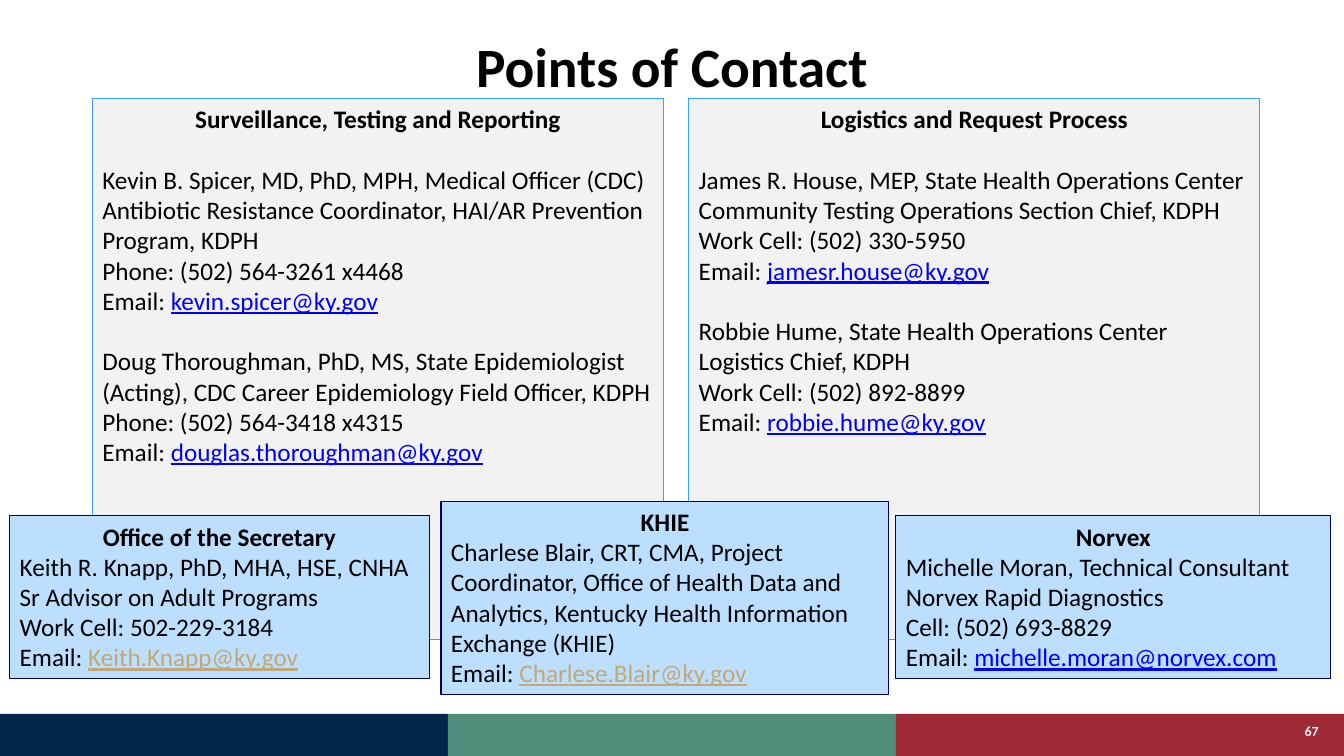
"""Build the Points of Contact slide."""
from pptx import Presentation
from pptx import util as u
from pptx.dml.color import RGBColor
from pptx.enum import shapes, text

Pt = u.Pt
COLORS = {
    "black": "000000", "grey": "F2F2F2", "sky": "3AA0FF", "pale": "BDDFFF",
    "navy": "000066", "link": "0000FF", "gold": "C1A875",
    "bar_blue": "002649", "bar_green": "518D7B", "bar_red": "9F2936",
}
LINE_GAP = 21.6


def rgb(name):
    return RGBColor.from_string(COLORS[name])


def write(p, content, size=18, color="black", bold=False, underline=None, align=text.PP_ALIGN.LEFT):
    p.alignment = align
    r = p.add_run()
    r.text = content
    r.font.name = "Calibri"
    r.font.size = Pt(size)
    r.font.bold = bold
    r.font.underline = underline
    r.font.color.rgb = rgb(color)


prs = Presentation()
prs.slide_width, prs.slide_height = Pt(960), Pt(540)
s = prs.slides.add_slide(prs.slide_layouts[6])

for i, color in enumerate(["bar_blue", "bar_green", "bar_red"]):
    sp = s.shapes.add_shape(shapes.MSO_SHAPE.RECTANGLE, Pt(320 * i), Pt(510), Pt(320), Pt(30))
    sp.shadow.inherit = False
    sp.fill.solid()
    sp.fill.fore_color.rgb = rgb(color)
    sp.line.fill.background()

labels = [
    ((66, 29, 828, 42), "Points of Contact",
     dict(size=39.6, bold=True, align=text.PP_ALIGN.CENTER)),
    ((894, 513, 55, 20), "67",
     dict(size=10, color="grey", bold=True, align=text.PP_ALIGN.RIGHT)),
]
for box, content, fmt in labels:
    tf = s.shapes.add_textbox(*map(Pt, box)).text_frame
    tf.word_wrap = True
    tf.vertical_anchor = text.MSO_ANCHOR.MIDDLE
    write(tf.paragraphs[0], content, **fmt)
    tf.paragraphs[0].line_spacing = 0.9

program = dict(fill="grey", line="sky", gap=LINE_GAP, grow=False)
partner = dict(fill="pale", line="navy", gap=0, grow=True)
cards = [
    ((492, 70.5, 408, 386.5), program, "Logistics and Request Process", [
        (["James R. House, MEP, State Health Operations Center "
          "Community Testing Operations Section Chief, KDPH",
          "Work Cell: (502) 330-5950"], "jamesr.house@ky.gov", "link"),
        (["Robbie Hume, State Health Operations Center Logistics Chief, KDPH",
          "Work Cell: (502) 892-8899"], "robbie.hume@ky.gov", "link"),
    ]),
    ((66, 70.5, 408, 386.5), program, "Surveillance, Testing and Reporting", [
        (["Kevin B. Spicer, MD, PhD, MPH, Medical Officer (CDC)",
          "Antibiotic Resistance Coordinator, HAI/AR Prevention Program, KDPH",
          "Phone: (502) 564-3261 x4468"], "kevin.spicer@ky.gov", "link"),
        (["Doug Thoroughman, PhD, MS, State Epidemiologist (Acting), "
          "CDC Career Epidemiology Field Officer, KDPH",
          "Phone: (502) 564-3418 x4315"], "douglas.thoroughman@ky.gov", "link"),
    ]),
    ((640, 368.5, 310.5, 116.5), partner, "Norvex", [
        (["Michelle Moran, Technical Consultant Norvex Rapid Diagnostics",
          "Cell: (502) 693-8829"], "michelle.moran@norvex.com", "link"),
    ]),
    ((315, 358, 320, 138), partner, "KHIE", [
        (["Charlese Blair, CRT, CMA, Project Coordinator, Office of Health Data "
          "and Analytics, Kentucky Health Information Exchange (KHIE)"],
         "Charlese.Blair@ky.gov", "gold"),
    ]),
    ((7, 368.5, 299.5, 116.5), partner, "Office of the Secretary", [
        (["Keith R. Knapp, PhD, MHA, HSE, CNHA", "Sr Advisor on Adult Programs",
          "Work Cell: 502-229-3184"], "Keith.Knapp@ky.gov", "gold"),
    ]),
]
for box, style, heading, contacts in cards:
    sp = s.shapes.add_shape(shapes.MSO_SHAPE.RECTANGLE, *map(Pt, box))
    sp.shadow.inherit = False
    sp.fill.solid()
    sp.fill.fore_color.rgb = rgb(style["fill"])
    sp.line.color.rgb = rgb(style["line"])
    sp.line.width = Pt(0.75)
    tf = sp.text_frame
    tf.word_wrap = True
    tf.vertical_anchor = text.MSO_ANCHOR.TOP
    if style["grow"]:
        tf.auto_size = text.MSO_AUTO_SIZE.SHAPE_TO_FIT_TEXT
    write(tf.paragraphs[0], heading, bold=True, align=text.PP_ALIGN.CENTER)
    for details, email, email_color in contacts:
        for i, detail in enumerate(details):
            p = tf.add_paragraph()
            p.space_before = Pt(0 if i else style["gap"])
            write(p, detail)
        p = tf.add_paragraph()
        write(p, "Email: ")
        write(p, email, color=email_color, underline=True)

prs.save("out.pptx")
